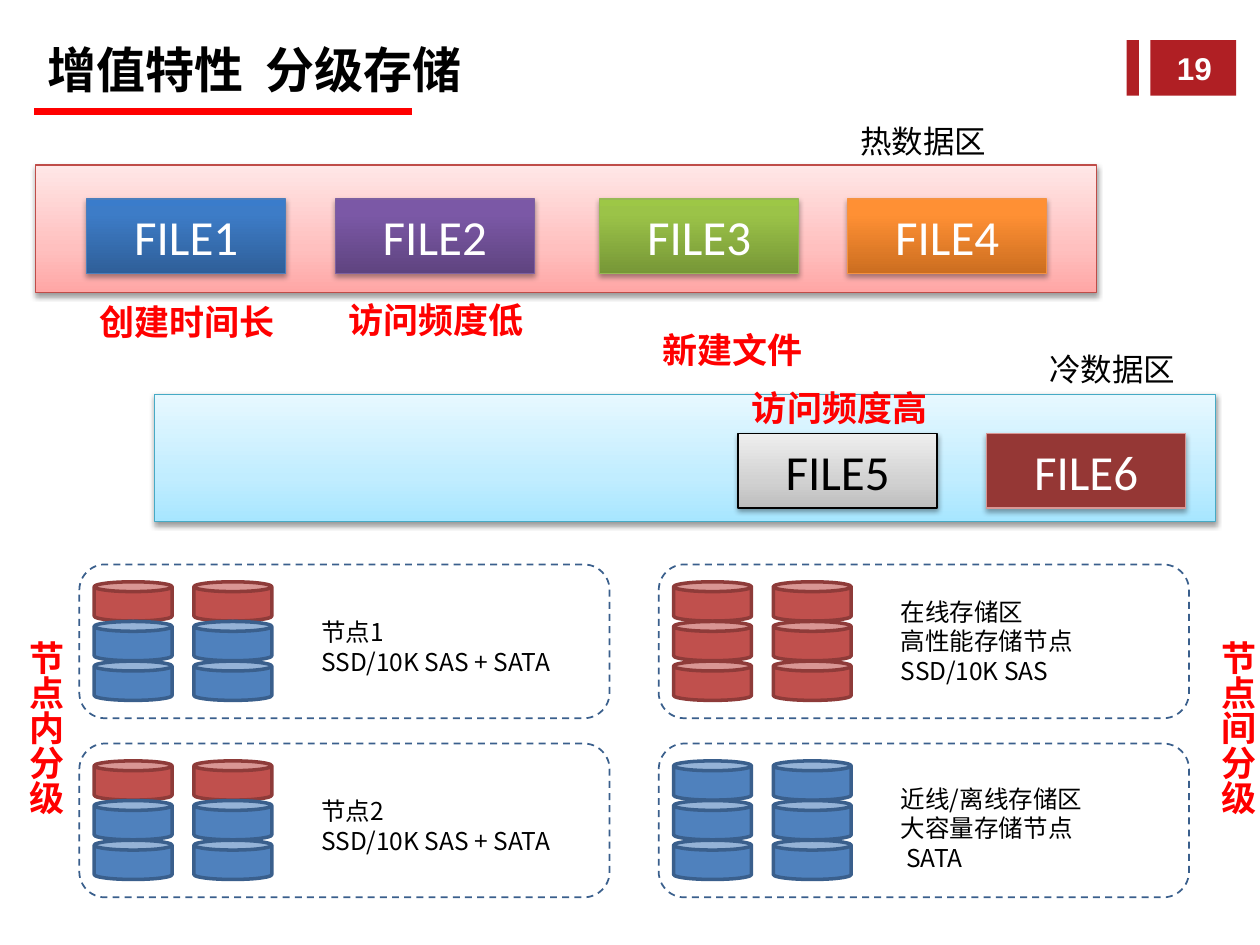
from itertools import product
from copy import deepcopy
from lxml.etree import SubElement
from pptx import Presentation
from pptx.dml.color import RGBColor
from pptx.enum.dml import MSO_LINE
from pptx.enum.shapes import MSO_CONNECTOR, MSO_SHAPE
from pptx.enum.text import MSO_ANCHOR, PP_ALIGN
from pptx.oxml.ns import qn
from pptx.util import Cm, Pt

RED, BLUE = ("C0504D", "8E3B39"), ("4F81BD", "3A5F8C")
NOTO = "Noto Sans CJK SC"
WARM, SOFT = (38, 1.6), (35, 1.8)  # shadow opacity and distance


def paint(target, code):
    target.rgb = RGBColor.from_string(code)


class Deck:
    def __init__(self):
        self.prs = Presentation()
        self.prs.slide_width, self.prs.slide_height = Cm(25.4), Cm(19.05)
        self.slide = self.prs.slides.add_slide(self.prs.slide_layouts[6])
        self.styles = {
            "title": {"size": Pt(28), "bold": True, "name": NOTO},
            "zone": {"size": Pt(18), "name": NOTO},
            "note": {"size": Pt(20), "bold": True, "name": NOTO},
            "node": {"size": Pt(14), "name": NOTO},
            "page": {"size": Pt(18), "bold": True, "name": "Arial"},
            "file": {"size": Pt(28), "name": "Calibri"},
        }

    def label(self, frame, text, style, color, align=PP_ALIGN.LEFT):
        frame.word_wrap = True
        for i, line in enumerate(text.split("\n")):
            para = frame.add_paragraph() if i else frame.paragraphs[0]
            para.alignment = align
            run = para.add_run()
            run.text = line
            for key, value in self.styles[style].items():
                setattr(run.font, key, value)
            paint(run.font.color, color)
            SubElement(run.font._element, qn("a:ea"), typeface=run.font.name)

    def text(self, box, text, style, color="000000", align=PP_ALIGN.LEFT,
             anchor=MSO_ANCHOR.TOP, tall=False):
        frame = self.slide.shapes.add_textbox(*map(Cm, box)).text_frame
        frame.vertical_anchor = anchor
        self.label(frame, text, style, color, align)
        if tall:
            frame._txBody.bodyPr.set("vert", "eaVert")

    def shape(self, kind, box, fill=None, line=None, width=0.75, dash=None):
        shape = self.slide.shapes.add_shape(kind, *map(Cm, box))
        if fill:
            shape.fill.solid()
            paint(shape.fill.fore_color, fill)
        else:
            shape.fill.background()
        if line:
            paint(shape.line.color, line)
            shape.line.width = Pt(width)
            shape.line.dash_style = dash
        else:
            shape.line.fill.background()
        shape.shadow.inherit = False
        return shape

    def panel(self, box, colors, line, mid, shade):
        """Rectangle with a soft shadow and, for three colours, a gradient."""
        shape = self.shape(MSO_SHAPE.RECTANGLE, box, colors[0], line)
        props = shape._element.spPr
        if len(colors) == 3:
            shape.fill.gradient()
            shape.fill.gradient_angle = 90
            stops = props.find(qn("a:gradFill")).find(qn("a:gsLst"))
            stops.insert(1, deepcopy(stops[0]))
            for stop, spot, code in zip(shape.fill.gradient_stops, (0, mid, 1), colors):
                stop.position = spot
                paint(stop.color, code)
        alpha, dist = shade
        outer = SubElement(props.find(qn("a:effectLst")), qn("a:outerShdw"),
                           blurRad=str(Pt(3.1)), dist=str(Pt(dist)),
                           dir="5400000", rotWithShape="0")
        black = SubElement(outer, qn("a:srgbClr"), val="000000")
        SubElement(black, qn("a:alpha"), val=str(alpha * 1000))
        return shape

    def file(self, left, top, name, colors, line, mid=0.8, shade=SOFT, ink="FFFFFF"):
        shape = self.panel((left, top, 4.01, 1.5), colors, line, mid, shade)
        shape.text_frame.vertical_anchor = MSO_ANCHOR.MIDDLE
        self.label(shape.text_frame, name, "file", ink, PP_ALIGN.CENTER)

    def rule(self, left, top, right, color, width):
        line = self.slide.shapes.add_connector(
            MSO_CONNECTOR.STRAIGHT, Cm(left), Cm(top), Cm(right), Cm(top))
        paint(line.line.color, color)
        line.line.width = Pt(width)
        SubElement(line._element.spPr, qn("a:effectLst"))

    def node(self, left, top, rows, text, drop, high):
        """Dashed frame with two stacks of disks and a caption."""
        for (row, (fill, edge)), col in product(enumerate(rows), range(2)):
            box = (left + 0.3 + col * 2.01, top + 0.35 + row * 0.8, 1.57, 0.79)
            self.shape(MSO_SHAPE.CAN, box, fill, edge, 2)
        self.shape(MSO_SHAPE.ROUNDED_RECTANGLE, (left, top, 10.69, 3.1),
                   None, BLUE[1], 1, MSO_LINE.DASH)
        self.text((left + 4.63, top + drop, 5.92, high), text, "node")


def main():
    deck = Deck()

    # Page number and title
    for left, wide in ((23.19, 1.73), (22.71, 0.25)):
        deck.shape(MSO_SHAPE.RECTANGLE, (left, 0.81, wide, 1.12), "B01F24")
    deck.text((23.24, 0.86, 1.68, 1.04), "19", "page", "FFFFFF", PP_ALIGN.CENTER)
    deck.rule(0.69, 2.24, 8.31, "FF0000", 4)
    deck.text((0.71, 0.61, 15.19, 1.57), "增值特性  分级存储", "title",
              anchor=MSO_ANCHOR.MIDDLE)

    # Hot and cold zones
    for left, top, colors, line in (
            (0.71, 3.33, ("FFA6A5", "FFC0BF", "FFE7E7"), "BF4C48"),
            (3.12, 7.95, ("A7E6FF", "C1EDFF", "E7F8FF"), "46AAC5")):
        deck.panel((left, top, 21.39, 2.57), colors, line, 0.35, WARM)
    for left, top, name in ((17.09, 2.34, "热数据区"), (20.9, 6.93, "冷数据区")):
        deck.text((left, top, 4.22, 1.02), name, "zone")

    # Reasons for moving a file
    for left, top, note in ((13.11, 6.5, "新建文件"), (1.75, 5.94, "创建时间长"),
                            (6.78, 5.89, "访问频度低"), (14.91, 7.67, "访问频度高")):
        deck.text((left, top, 4.42, 1.12), note, "note", "FF0000")

    # Storage nodes
    mixed, sas = (RED, BLUE, BLUE), "SSD/10K SAS"
    for left, top, rows, text, drop, high in (
            (1.6, 11.38, mixed, f"节点1\n{sas} + SATA", 0.94, 1.45),
            (1.6, 14.99, mixed, f"节点2\n{sas} + SATA", 0.94, 1.45),
            (13.28, 11.38, [RED] * 3, f"在线存储区\n高性能存储节点\n{sas}", 0.53, 2.06),
            (13.28, 14.99, [BLUE] * 3, "近线/离线存储区\n大容量存储节点\n SATA", 0.69, 2.06)):
        deck.node(left, top, rows, text, drop, high)
    for left, name in ((0.1, "节点内分级"), (24.13, "节点间分级")):
        deck.text((left, 12.67, 1.37, 4.04), name, "note", "FF0000", tall=True)

    # Files
    for left, name, colors, line in (
            (1.75, "FILE1", ("2F5F99", "3D7CC7", "3A7CCB"), "4B7EBC"),
            (6.76, "FILE2", ("5F4480", "7B58A6", "7C57A8"), "7D60A0"),
            (12.09, "FILE3", ("779737", "9BC348", "9DC746"), "98B955"),
            (17.09, "FILE4", ("CC6E20", "FF9034", "FF9136"), "F69240")):
        deck.file(left, 4.01, name, colors, line)
    deck.file(14.88, 8.74, "FILE5", ("BDBDBD", "D1D1D1", "EEEEEE"), "000000",
              0.35, WARM, "000000")
    deck.file(19.89, 8.74, "FILE6", ("953735",), "D99694")

    deck.prs.save("out.pptx")


if __name__ == "__main__":
    main()
